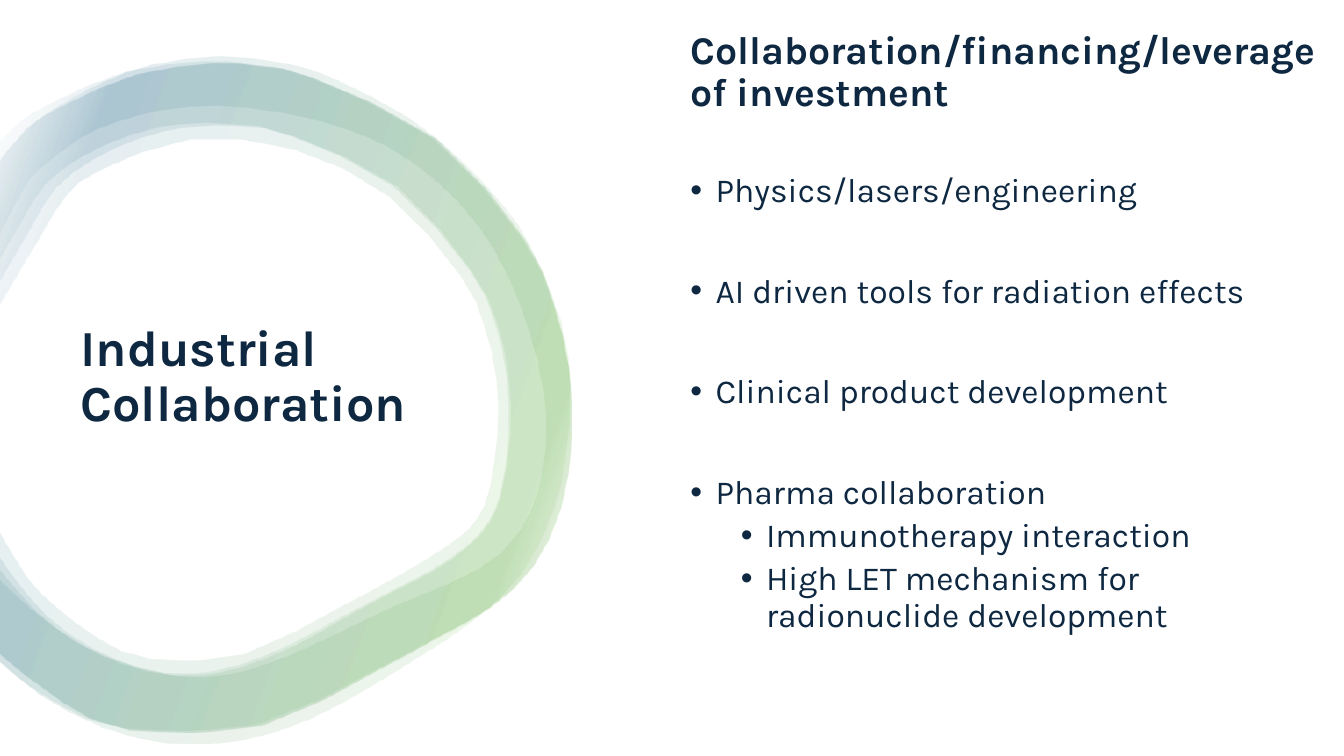
from dataclasses import dataclass

from lxml.etree import SubElement
from pptx import Presentation
from pptx.dml.color import RGBColor
from pptx.enum.shapes import MSO_SHAPE
from pptx.enum.text import MSO_ANCHOR
from pptx.oxml.ns import qn
from pptx.util import Cm, Pt


@dataclass(frozen=True)
class Theme:
    font: str = "Karla"
    ink: str = "0E2841"
    paper: str = "FFFFFF"
    green: str = "4EA72E"
    blue: str = "156082"
    ring_opacity: int = 10
    ring_angle: int = 160
    title_size: int = 36
    heading_size: int = 28
    bullet_size: int = 24


THEME = Theme()
CM_PER_INCH = 2.54
CURVE_STEPS = 2

# Ring edges in inches: outer edges run clockwise from the top left,
# inner edges run back from the bottom left.
WIDE_OUTER = [
    (-0.02, 1.6), (0.33, 1.23), (0.67, 1), (1.04, 0.81), (1.51, 0.64), (2.18, 0.56),
    (2.84, 0.63), (3.31, 0.78), (4.04, 1.16), (4.55, 1.57), (4.99, 2.04),
    (5.26, 2.45), (5.56, 3.19), (5.65, 3.83), (5.61, 4.46), (5.5, 5.01),
    (5.18, 5.67), (4.7, 6.14), (4.18, 6.49), (3.66, 6.81), (3.08, 7.12), (2.43, 7.33),
    (1.71, 7.37), (1.03, 7.21), (0.41, 6.89), (-0.02, 6.53),
]
WIDE_INNER = [
    (-0.02, 5.72), (0.31, 6.03), (0.76, 6.36), (1.25, 6.59), (1.77, 6.7), (2.29, 6.68),
    (2.82, 6.51), (3.35, 6.27), (3.91, 6), (4.47, 5.77), (4.96, 5.48), (5.28, 5.02),
    (5.4, 4.44), (5.38, 3.85), (5.24, 3.28), (5.03, 2.73), (4.73, 2.23), (4.33, 1.8),
    (3.85, 1.46), (3.31, 1.24), (2.75, 1.11), (2.17, 1.05), (1.61, 1.09), (1.13, 1.22),
    (0.8, 1.37), (0.36, 1.71), (0.21, 1.93), (-0.02, 2.36),
]
MIDDLE_OUTER = [
    (-0.02, 1.43), (0.2, 1.21), (0.51, 1.02), (1.25, 0.71), (2.02, 0.61), (2.51, 0.64),
    (3.03, 0.75), (4.29, 1.37), (5.18, 2.37), (5.47, 2.98), (5.64, 3.65), (5.67, 4.34),
    (5.56, 5.04), (5.28, 5.62), (4.85, 6.02), (4.31, 6.32), (3.73, 6.63), (2.54, 7.18),
    (1.22, 7.21), (0.62, 6.99), (0.21, 6.73), (-0.02, 6.53),
]
MIDDLE_INNER = [
    (-0.02, 5.61), (0.37, 6.06), (0.84, 6.4), (1.38, 6.61), (1.86, 6.67), (2.35, 6.59),
    (2.88, 6.38), (3.42, 6.09), (3.88, 5.85), (4.28, 5.64), (4.62, 5.41), (4.83, 5.18),
    (4.96, 4.88), (5.04, 4.31), (5.02, 3.73), (4.9, 3.18), (4.65, 2.67), (3.89, 1.84),
    (2.87, 1.34), (2.32, 1.23), (1.78, 1.23), (1.29, 1.34), (0.82, 1.55), (0.45, 1.83),
    (0.2, 2.23), (-0.02, 2.61),
]
SHARED_OUTER = [
    (-0.02, 1.63), (0.26, 1.28), (0.62, 1.05), (1.35, 0.74), (2.11, 0.63), (2.59, 0.66),
    (3.1, 0.77), (4.33, 1.38), (5.2, 2.37), (5.48, 2.98), (5.64, 3.65), (5.67, 4.34),
    (5.56, 5.04), (5.28, 5.62), (4.86, 6.02), (4.33, 6.32), (3.76, 6.63), (2.59, 7.19),
    (1.29, 7.23), (0.62, 6.95), (-0.02, 6.46),
]
THICK_INNER = [
    (-0.02, 5.23), (0.27, 5.71), (0.55, 6), (0.98, 6.32), (1.48, 6.52), (2.41, 6.48),
    (3.39, 6), (3.86, 5.75), (4.22, 5.54), (4.55, 5.32), (4.74, 5.12), (4.85, 4.85),
    (4.93, 4.3), (4.92, 3.75), (4.8, 3.23), (4.57, 2.74), (3.86, 1.95), (2.91, 1.48),
    (1.89, 1.38), (0.99, 1.69), (0.66, 1.94), (0.42, 2.32), (-0.02, 3.06),
]
THIN_INNER = [
    (-0.02, 5.47), (0.1, 5.66), (0.46, 6.09), (0.92, 6.42), (1.45, 6.63), (1.93, 6.69),
    (2.41, 6.6), (2.93, 6.39), (3.45, 6.1), (3.91, 5.85), (4.3, 5.65), (4.63, 5.42),
    (4.85, 5.18), (4.97, 4.88), (5.06, 4.31), (5.04, 3.73), (4.92, 3.18), (4.67, 2.68),
    (3.94, 1.85), (2.94, 1.36), (2.4, 1.25), (1.87, 1.26), (1.39, 1.37), (0.93, 1.58),
    (0.56, 1.86), (0.31, 2.26), (-0.02, 2.83),
]
RINGS = [
    (WIDE_OUTER, WIDE_INNER),
    (MIDDLE_OUTER, MIDDLE_INNER),
    (SHARED_OUTER, THICK_INNER),
    (SHARED_OUTER, THIN_INNER),
]

# Text, level, space before in points
BULLETS = [
    ("Physics/lasers/engineering", 0, 41.5),
    ("AI driven tools for radiation effects", 0, 46),
    ("Clinical product development", 0, 46),
    ("Pharma collaboration", 0, 46),
    ("Immunotherapy interaction", 1, 5),
    ("High LET mechanism for radionuclide development", 1, 5),
]


def smooth_curve(knots):
    """Return points on a Catmull-Rom curve through the knots."""
    padded = [knots[0], *knots, knots[-1]]
    points = []
    for before, start, end, after in zip(padded, padded[1:], padded[2:], padded[3:]):
        for step in range(CURVE_STEPS):
            t = step / CURVE_STEPS
            points.append(tuple(
                b + ((c - a) * t + (2 * a - 5 * b + 4 * c - d) * t ** 2
                     + (3 * b - a - 3 * c + d) * t ** 3) / 2
                for a, b, c, d in zip(before, start, end, after)
            ))
    return [*points, knots[-1]]


def fill_ring(shape):
    """Give the ring a translucent gradient that fades out at both ends."""
    shape.fill.gradient()
    shape.fill.gradient_angle = THEME.ring_angle
    stops = shape._element.spPr.find(qn("a:gradFill")).find(qn("a:gsLst"))
    for stop in list(stops):
        stops.remove(stop)
    for percent, color in ((2, THEME.paper), (16, THEME.green),
                           (85, THEME.blue), (100, THEME.paper)):
        stop = SubElement(stops, qn("a:gs"), pos=str(percent * 1000))
        tint = SubElement(stop, qn("a:srgbClr"), val=color)
        SubElement(tint, qn("a:alpha"), val=str(THEME.ring_opacity * 1000))


def add_ring(group, outer, inner):
    outline = [(Cm(x * CM_PER_INCH), Cm(y * CM_PER_INCH))
               for x, y in smooth_curve(outer) + smooth_curve(inner)]
    builder = group.shapes.build_freeform(*outline[0])
    builder.add_line_segments(outline[1:], close=True)
    ring = builder.convert_to_shape()
    ring.shadow.inherit = False
    ring.line.fill.background()
    fill_ring(ring)


def add_backdrop(slide, width, height):
    backdrop = slide.shapes.add_shape(MSO_SHAPE.RECTANGLE, 0, 0, width, height)
    backdrop.shadow.inherit = False
    backdrop.fill.solid()
    backdrop.fill.fore_color.rgb = RGBColor.from_string(THEME.paper)
    backdrop.line.fill.background()


def add_text_frame(slide, left, top, width, height):
    frame = slide.shapes.add_textbox(Cm(left), Cm(top), Cm(width), Cm(height)).text_frame
    frame.word_wrap = True
    frame.vertical_anchor = MSO_ANCHOR.MIDDLE
    return frame


def write_paragraph(paragraph, text, size, bold=False, space_before=0):
    paragraph.text = text
    paragraph.line_spacing = 0.9
    paragraph.space_before = Pt(space_before)
    paragraph.font.name = THEME.font
    paragraph.font.size = Pt(size)
    paragraph.font.bold = bold
    paragraph.font.color.rgb = RGBColor.from_string(THEME.ink)


def add_bullet(frame, text, level, space_before):
    paragraph = frame.add_paragraph()
    write_paragraph(paragraph, text, THEME.bullet_size, space_before=space_before)
    paragraph.level = level
    properties = paragraph._p.get_or_add_pPr()
    properties.set("marL", str(Cm(0.635 + 1.27 * level)))
    properties.set("indent", str(-Cm(0.635)))
    SubElement(properties, qn("a:buFont"), typeface="Arial")
    SubElement(properties, qn("a:buChar"), char="•")
    properties.append(properties.find(qn("a:defRPr")))


def main():
    presentation = Presentation()
    presentation.slide_width = Cm(33.87)
    presentation.slide_height = Cm(19.05)
    slide = presentation.slides.add_slide(presentation.slide_layouts[6])

    add_backdrop(slide, presentation.slide_width, presentation.slide_height)
    ring_group = slide.shapes.add_group_shape()
    for outer, inner in RINGS:
        add_ring(ring_group, outer, inner)

    title = add_text_frame(slide, 1.78, 3.45, 10.72, 12.14)
    write_paragraph(title.paragraphs[0], "Industrial Collaboration", THEME.title_size, bold=True)

    body = add_text_frame(slide, 17.15, 0, 16.41, 16.76)
    write_paragraph(body.paragraphs[0], "Collaboration/financing/leverage of investment",
                    THEME.heading_size, bold=True, space_before=10)
    for text, level, space_before in BULLETS:
        add_bullet(body, text, level, space_before)

    presentation.save("out.pptx")


if __name__ == "__main__":
    main()
